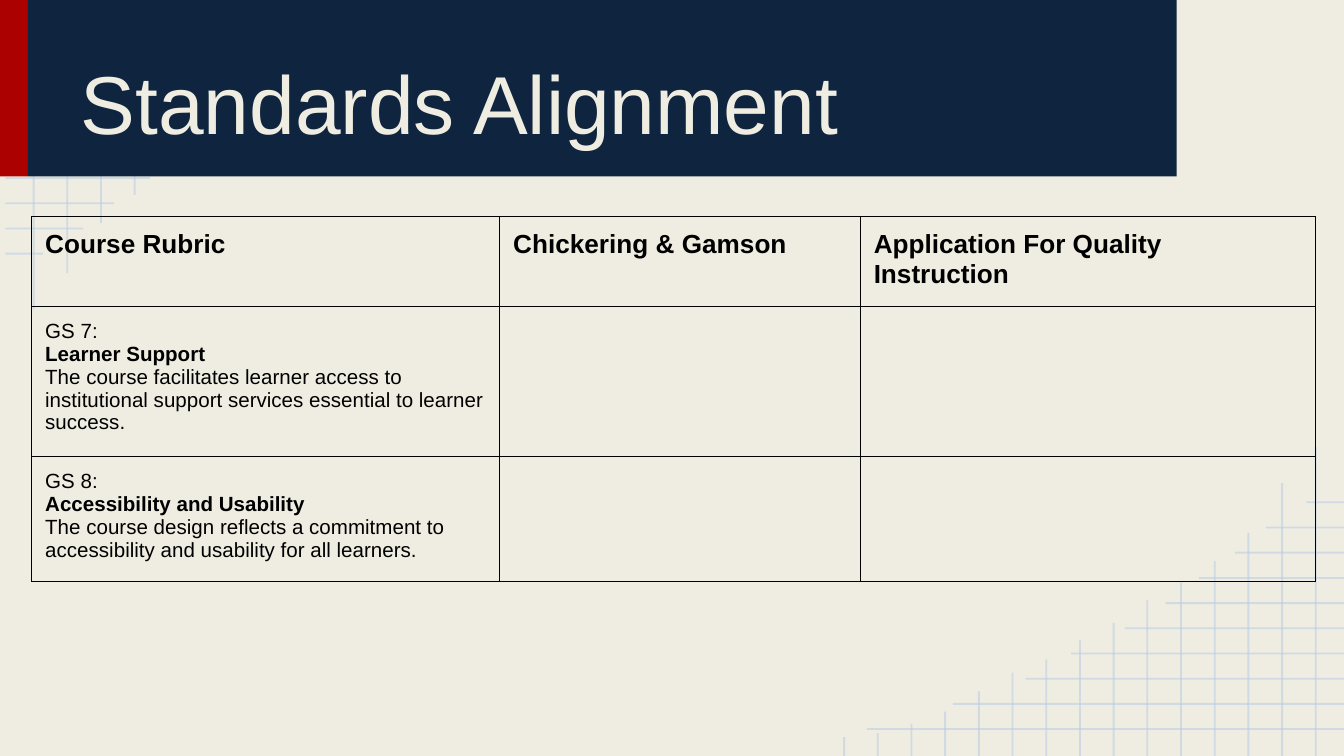
from lxml import etree
from pptx import Presentation
from pptx.dml.color import RGBColor
from pptx.enum import shapes, text
from pptx.oxml import ns
from pptx.util import Pt

CREAM = RGBColor(0xEF, 0xED, 0xE2)
NAVY = RGBColor(0x0F, 0x24, 0x3E)
RED = RGBColor(0xAB, 0x01, 0x01)
GRID_BLUE = RGBColor(0xB7, 0xCC, 0xE4)
BLACK = RGBColor(0, 0, 0)
WIDTH, HEIGHT = 720, 405

deck = Presentation()
deck.slide_width, deck.slide_height = Pt(WIDTH), Pt(HEIGHT)
page = deck.slides.add_slide(deck.slide_layouts[5])
page.background.fill.solid()
page.background.fill.fore_color.rgb = CREAM


def add_grid_line(x1, y1, x2, y2):
    line = page.shapes.add_connector(
        shapes.MSO_CONNECTOR.STRAIGHT, Pt(x1), Pt(y1), Pt(x2), Pt(y2))
    line.line.color.rgb = GRID_BLUE
    line.line.width = Pt(1)
    color = line.element.spPr.find(".//" + ns.qn("a:srgbClr"))
    etree.SubElement(color, ns.qn("a:alpha"), val="54000")
    etree.SubElement(line.element.spPr, ns.qn("a:effectLst"))


# Corner grid: where each row ends on the right, each column at the bottom
row_ends = [258.5, 212.4, 173.5, 149, 120.2, 98.6, 80.6, 61.2, 44.6, 23]
column_ends = [165.6, 146.2, 119.5, 104.4, 92.9, 83.5, 71.3, 61.9,
               51.8, 44.6, 34.6, 23.8, 17.3, 12.2, 10.1]
grid = [(2.9, 14.4 + 13.5 * i, end, 14.4 + 13.5 * i)
        for i, end in enumerate(row_ends)]
grid += [(18 + 18.05 * i, end, 18 + 18.05 * i, 0)
         for i, end in enumerate(column_ends)]

# The lower right grid is the upper left one turned half round
for x1, y1, x2, y2 in grid:
    add_grid_line(x1, y1, x2, y2)
for x1, y1, x2, y2 in grid:
    add_grid_line(722.9 - x1, HEIGHT - y1, 722.9 - x2, HEIGHT - y2)

# Title banner
for left, width, color in [(0, 15, RED), (15, 615.4, NAVY)]:
    banner = page.shapes.add_shape(
        shapes.MSO_SHAPE.RECTANGLE, Pt(left), Pt(-0.5), Pt(width), Pt(95))
    banner.shadow.inherit = False
    banner.fill.solid()
    banner.fill.fore_color.rgb = color
    banner.line.fill.background()

title = page.shapes.title
banner.element.addnext(title.element)
title.left, title.top, title.width, title.height = Pt(36), Pt(8), Pt(576), Pt(80)
title_format = {
    "margin_left": Pt(7.2), "margin_right": Pt(7.2),
    "margin_top": Pt(7.2), "margin_bottom": Pt(7.2),
    "vertical_anchor": text.MSO_ANCHOR.BOTTOM,
    "auto_size": text.MSO_AUTO_SIZE.NONE, "word_wrap": True,
}
for name, value in title_format.items():
    setattr(title.text_frame, name, value)
paragraph = title.text_frame.paragraphs[0]
paragraph.alignment = text.PP_ALIGN.LEFT
span = paragraph.add_run()
span.text = "Standards Alignment"
span.font.name, span.font.size = "Arial", Pt(44)
span.font.color.rgb = CREAM

# Standards table: each cell is a list of paragraphs
rows = [
    [["Course Rubric"], ["Chickering & Gamson"],
     ["Application For Quality Instruction"]],
    [["GS 7:", "Learner Support",
      "The course facilitates learner access to institutional support "
      "services essential to learner success."], [], []],
    [["GS 8:", "Accessibility and Usability",
      "The course design reflects a commitment to accessibility and "
      "usability for all learners."], [], []],
]
column_widths = [250.7, 193.2, 244]
row_heights = [48.2, 80.4, 67]
table = page.shapes.add_table(
    3, 3, Pt(17), Pt(116), Pt(sum(column_widths)), Pt(sum(row_heights))).table
table.first_row = table.horz_banding = False
for column, width in zip(table.columns, column_widths):
    column.width = Pt(width)
for row, height in zip(table.rows, row_heights):
    row.height = Pt(height)

for r, row in enumerate(rows):
    for c, lines in enumerate(row):
        cell = table.cell(r, c)
        for side in ("left", "right", "top", "bottom"):
            setattr(cell, "margin_" + side, Pt(7.2))
            border = etree.SubElement(
                cell._tc.get_or_add_tcPr(),
                ns.qn("a:ln" + side[0].upper()), w=str(Pt(0.75)))
            paint = etree.SubElement(border, ns.qn("a:solidFill"))
            etree.SubElement(paint, ns.qn("a:srgbClr"), val=str(BLACK))
        cell.fill.background()
        for i, line in enumerate(lines):
            frame = cell.text_frame
            paragraph = frame.add_paragraph() if i else frame.paragraphs[0]
            span = paragraph.add_run()
            span.text = line
            span.font.name = "Arial"
            span.font.size = Pt(11 if r else 14)
            span.font.bold = r == 0 or i == 1
            span.font.color.rgb = BLACK

deck.save("out.pptx")
